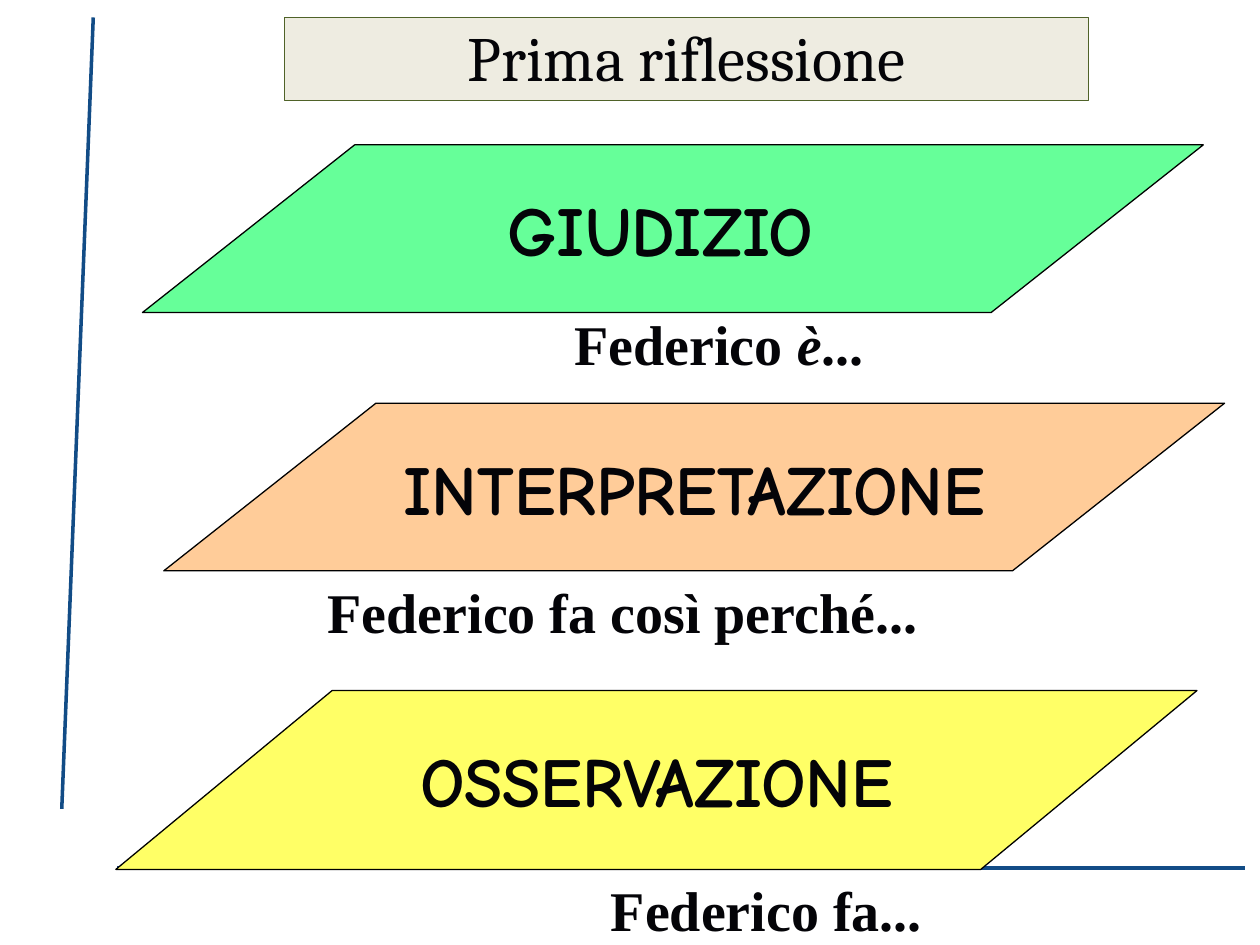
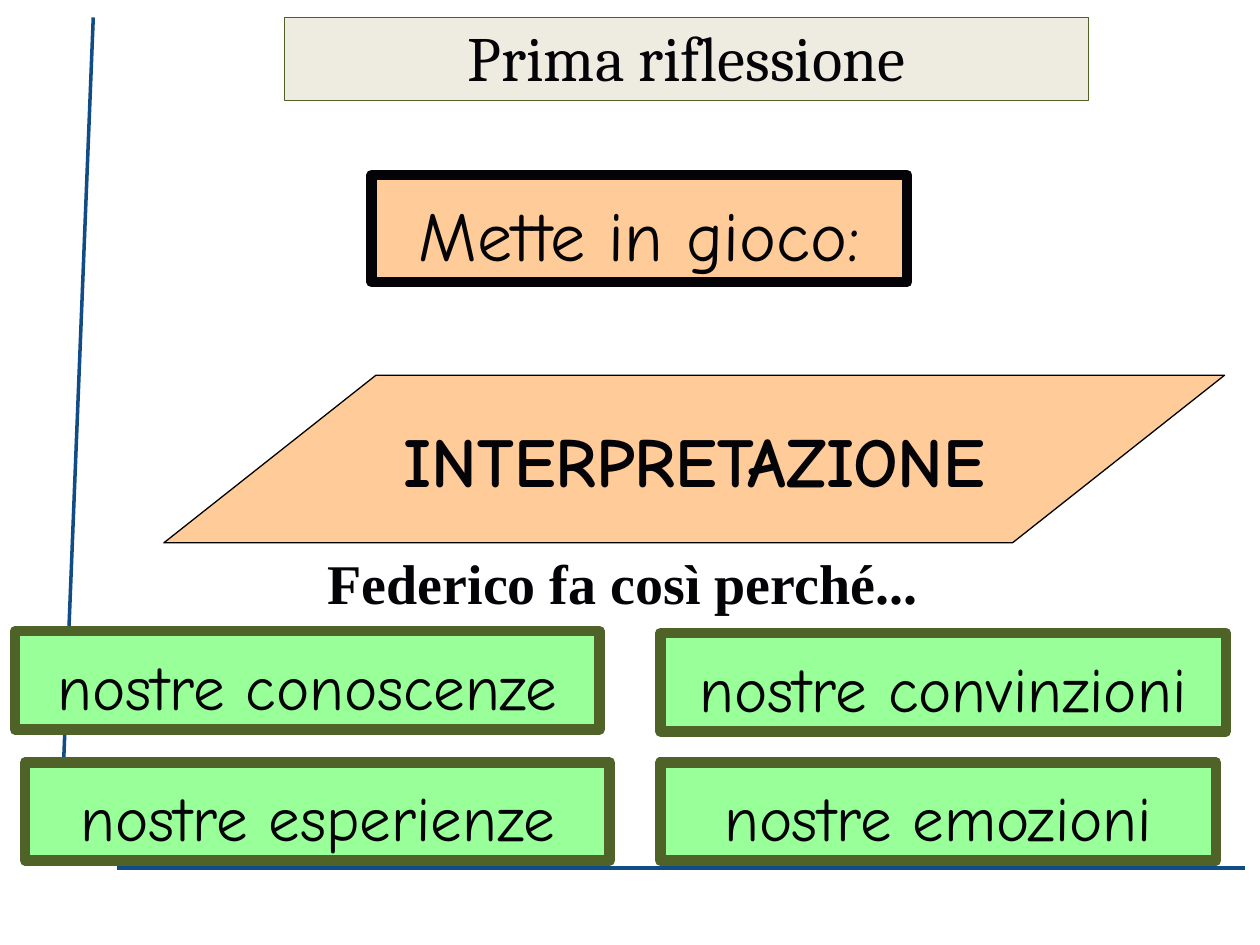
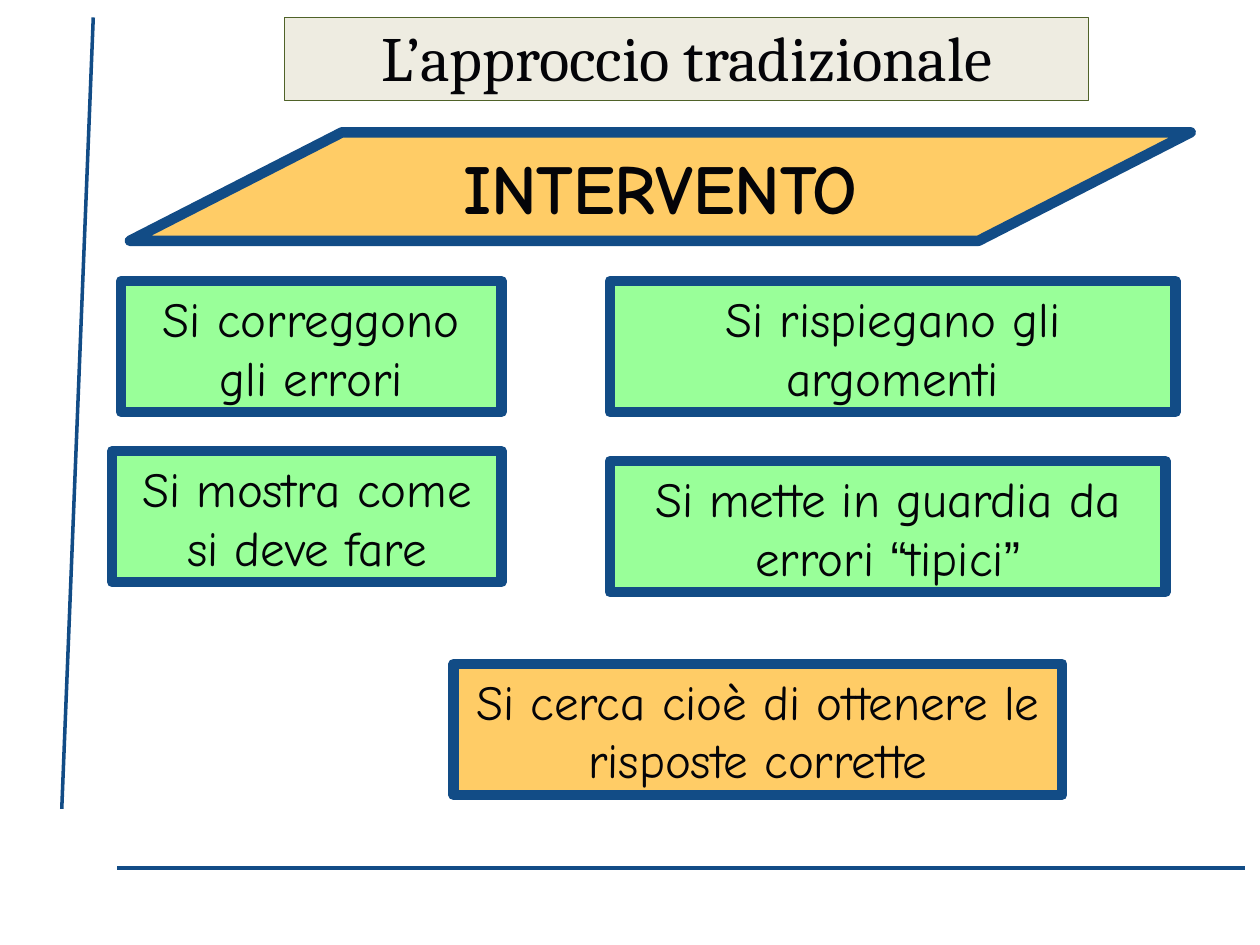
import pptx
import pptx.dml.color
import pptx.enum.shapes
import pptx.enum.text
import pptx.oxml
import pptx.oxml.ns
import pptx.util

Pt = pptx.util.Pt
SHAPES = pptx.enum.shapes.MSO_SHAPE
ANCHOR = pptx.enum.text.MSO_ANCHOR
COLOURS = {
    "ink": "040408", "outline": "000000", "blue": "124C86", "olive": "4F6228",
    "cream": "EEECE1", "yellow": "FFFF66", "mint": "66FF99", "green": "99FF99",
    "peach": "FFCC99", "orange": "FFCC66",
}
HAND, TITLE, BODY, QUOTE = "Comic Neue", "Cambria", "Times New Roman", "Arial"


def colour(name):
    return pptx.dml.color.RGBColor.from_string(COLOURS[name])


def write(shape, text, font=HAND, size=28, bold=False, anchor=ANCHOR.BOTTOM,
          wrap=True, grow=False, spaced=False):
    frame = shape.text_frame
    frame.word_wrap = wrap
    frame.vertical_anchor = anchor
    if grow:
        frame.auto_size = pptx.enum.text.MSO_AUTO_SIZE.SHAPE_TO_FIT_TEXT
    para = frame.paragraphs[0]
    para.alignment = pptx.enum.text.PP_ALIGN.CENTER
    if spaced:
        before = pptx.oxml.parse_xml(
            f'<a:spcBef {pptx.oxml.ns.nsdecls("a")}><a:spcPct val="50000"/></a:spcBef>')
        para._p.get_or_add_pPr().append(before)
    pieces = [(text, {})] if isinstance(text, str) else text
    for piece, change in pieces:
        span = para.add_run()
        span.text = piece
        span.font.name = change.get("font", font)
        span.font.size = Pt(size)
        span.font.bold = bold
        span.font.italic = change.get("italic", False)
        span.font.color.rgb = colour("ink")


def add_box(page, kind, box, fill, line, weight):
    shape = page.shapes.add_shape(kind, *map(Pt, box))
    shape.shadow.inherit = False
    shape.fill.solid()
    shape.fill.fore_color.rgb = colour(fill)
    shape.line.color.rgb = colour(line)
    shape.line.width = Pt(weight)
    return shape


def add_rule(page, start, end):
    rule = page.shapes.add_connector(
        pptx.enum.shapes.MSO_CONNECTOR.STRAIGHT, *map(Pt, start + end))
    rule.line.color.rgb = colour("blue")
    rule.line.width = Pt(2)
    rule._element.spPr.append(
        pptx.oxml.parse_xml(f'<a:effectLst {pptx.oxml.ns.nsdecls("a")}/>'))


def add_page(deck, title):
    page = deck.slides.add_slide(deck.slide_layouts[6])
    add_rule(page, (53.3, 10), (35.3, 462.2))
    add_rule(page, (711.4, 496), (67, 496))
    shape = add_box(page, SHAPES.RECTANGLE, (162.7, 10, 459.4, 47.5), "cream", "olive", 0.75)
    write(shape, title, font=TITLE, size=36)
    return page


def add_step(page, box, label, fill, line="outline", weight=0.75):
    shape = add_box(page, SHAPES.FLOWCHART_DATA, box, fill, line, weight)
    write(shape, label, size=40, bold=True, anchor=ANCHOR.MIDDLE, wrap=False)


def add_caption(page, step_box, text, indent, width, overlap=0):
    left, top, _, height = step_box
    caption = page.shapes.add_textbox(
        Pt(left + indent), Pt(top + height - overlap), Pt(width), Pt(45.4))
    write(caption, text, font=BODY, size=32, bold=True, anchor=ANCHOR.TOP,
          grow=True, spaced=True)


def add_card(page, box, text, fill="green", line="blue", size=28):
    shape = add_box(page, SHAPES.RECTANGLE, box, fill, line, 6)
    write(shape, text, size=size, grow=True, spaced=True)


def add_interpretation(page, top):
    box = (93.6, top, 606.2, 95.8)
    add_step(page, box, "INTERPRETAZIONE", "peach")
    add_caption(page, box, "Federico fa così perché...", 73.4, 378)


def levels_page(deck):
    page = add_page(deck, "Prima riflessione")
    observation = (66.2, 394.6, 617.8, 102.2)
    judgement = (81.4, 82.8, 606.2, 95.8)
    add_step(page, observation, "OSSERVAZIONE", "yellow")
    add_caption(page, observation, "Federico fa...", 216, 311.8)
    add_step(page, judgement, "GIUDIZIO ", "mint")
    add_caption(page, judgement, [("Federico ", {}), ("è", {"italic": True}), ("...", {})],
                194.4, 270, overlap=5)
    add_interpretation(page, 230.4)


def interpretation_page(deck):
    page = add_page(deck, "Prima riflessione")
    add_interpretation(page, 214.4)
    add_card(page, (212.4, 100, 306, 61.2), "Mette in gioco:", "peach", "ink", 40)
    for left, top, width, text in (
        (8.6, 360.7, 334, "nostre conoscenze"),
        (377.3, 361.7, 323.3, "nostre convinzioni"),
        (14.4, 435.6, 334, "nostre esperienze"),
        (377.3, 435.6, 317.5, "nostre emozioni"),
    ):
        add_card(page, (left, top, width, 56.2), text, line="olive", size=36)


def intervention_page(deck):
    page = add_page(deck, "L’approccio tradizionale")
    add_step(page, (74.2, 75.6, 606.2, 62), "INTERVENTO", "orange", "blue", 6)
    warning = [("Si mette in guardia da errori ", {}), ("“", {"font": QUOTE}),
               ("tipici", {}), ("”", {"font": QUOTE})]
    for left, top, width, text, fill in (
        (69.1, 160.6, 217.4, "Si correggono gli errori", "green"),
        (348.5, 160.6, 323.3, "Si rispiegano gli argomenti", "green"),
        (64.1, 257.8, 222.5, "Si mostra come si deve fare", "green"),
        (348.5, 263.5, 317.5, warning, "green"),
        (259.2, 379.4, 347.8, "Si cerca cioè di ottenere le risposte corrette", "orange"),
    ):
        add_card(page, (left, top, width, 74.9), text, fill)


def main():
    deck = pptx.Presentation()
    deck.slide_width, deck.slide_height = Pt(720), Pt(540)
    levels_page(deck)
    interpretation_page(deck)
    intervention_page(deck)
    deck.save("out.pptx")


if __name__ == "__main__":
    main()
